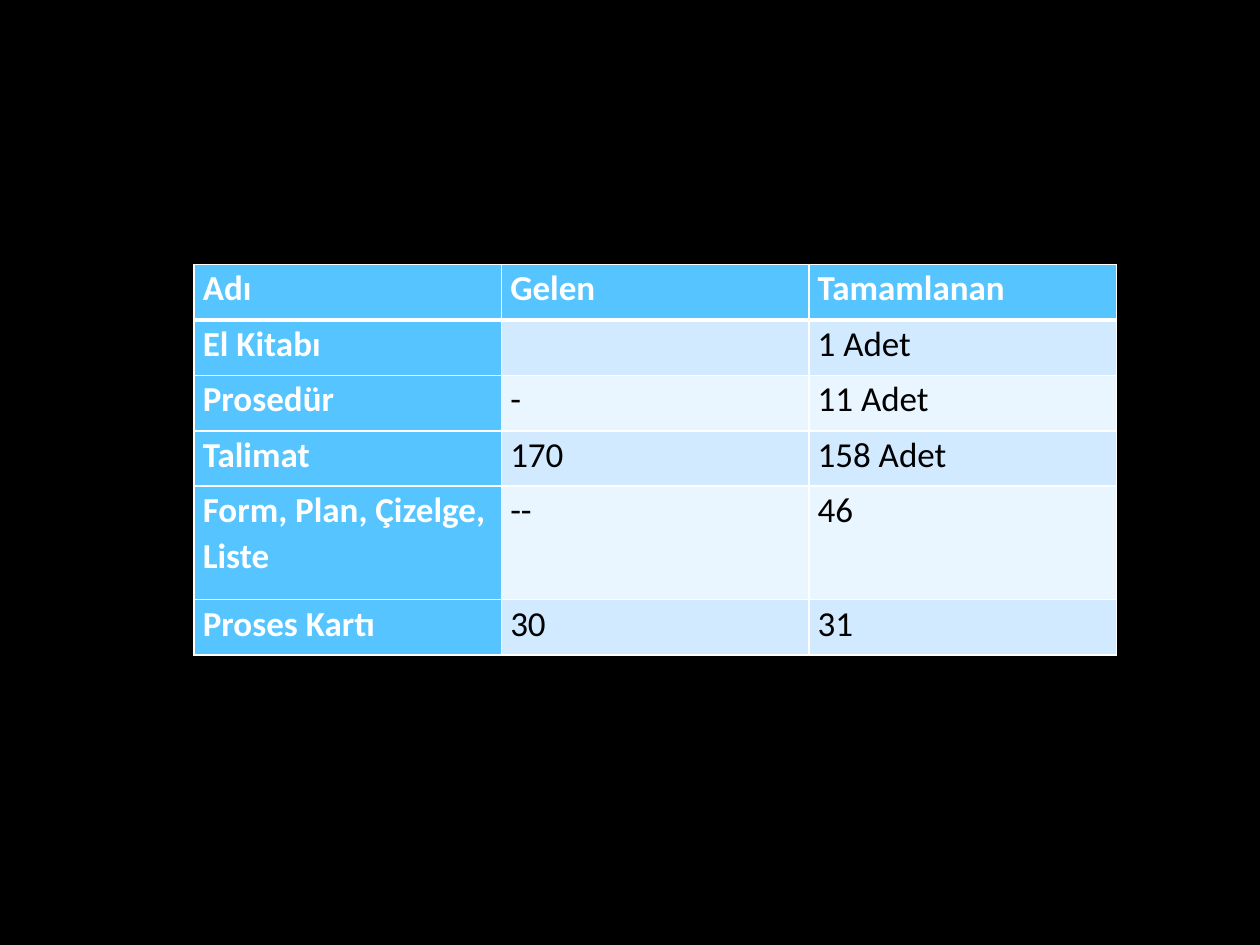
from lxml import etree
from pptx import Presentation
from pptx import util as u
from pptx.dml.color import RGBColor
from pptx.oxml import ns

BLACK = RGBColor(0x00, 0x00, 0x00)
WHITE = RGBColor(0xFF, 0xFF, 0xFF)
BLUE = RGBColor(0x56, 0xC5, 0xFF)
BANDS = RGBColor(0xD1, 0xEA, 0xFF), RGBColor(0xE9, 0xF5, 0xFF)

ROWS = [
    ("Adı", "Gelen", "Tamamlanan"),
    ("El Kitabı", "", "1 Adet"),
    ("Prosedür", "-", "11 Adet"),
    ("Talimat", "170", "158 Adet"),
    ("Form, Plan, Çizelge, Liste", "--", "46"),
    ("Proses Kartı", "30", "31"),
]
HEIGHTS = [0.44, 0.44, 0.44, 0.44, 0.9, 0.44]
COLUMN_WIDTH = 2.44


class Deck:
    """Table style and the slide being filled."""

    font = "Calibri"
    size = u.Pt(20)

    def __init__(self, prs):
        self.s = prs.slides.add_slide(prs.slide_layouts[6])

    def background(self, color):
        fill = self.s.background.fill
        fill.solid()
        fill.fore_color.rgb = color

    def border(self, cell, side, points):
        tc_pr = cell._tc.get_or_add_tcPr()
        ln = etree.SubElement(tc_pr, ns.qn(f"a:ln{side}"), w=str(u.Pt(points)))
        fill = etree.SubElement(ln, ns.qn("a:solidFill"))
        etree.SubElement(fill, ns.qn("a:srgbClr"), val=str(WHITE))

    def cell(self, cell, value, row, col):
        heading = row == 0 or col == 0
        widths = {"L": 1, "R": 1, "T": 3 if row == 1 else 1, "B": 3 if row == 0 else 1}
        for side, points in widths.items():
            self.border(cell, side, points)
        cell.fill.solid()
        cell.fill.fore_color.rgb = BLUE if heading else BANDS[(row - 1) % 2]
        cell.margin_left = cell.margin_right = u.Inches(0.07)
        cell.margin_top = cell.margin_bottom = 0
        p = cell.text_frame.paragraphs[0]
        p.text = value
        p.line_spacing = 1.07
        p.font.name = self.font
        p.font.size = self.size
        p.font.bold = heading
        p.font.color.rgb = WHITE if heading else BLACK

    def table(self, left, top, rows, heights, column_width):
        count = len(rows[0])
        table = self.s.shapes.add_table(
            len(rows), count, u.Inches(left), u.Inches(top),
            u.Inches(column_width * count), u.Inches(sum(heights))).table
        table.first_col = True
        for column in table.columns:
            column.width = u.Inches(column_width)
        for i, (values, height) in enumerate(zip(rows, heights)):
            table.rows[i].height = u.Inches(height)
            for j, value in enumerate(values):
                self.cell(table.cell(i, j), value, i, j)


def main():
    prs = Presentation()
    prs.slide_width, prs.slide_height = u.Inches(10), u.Inches(7.5)
    deck = Deck(prs)
    deck.background(BLACK)
    deck.table(1.54, 2.1, ROWS, HEIGHTS, COLUMN_WIDTH)
    prs.save("out.pptx")


if __name__ == "__main__":
    main()
